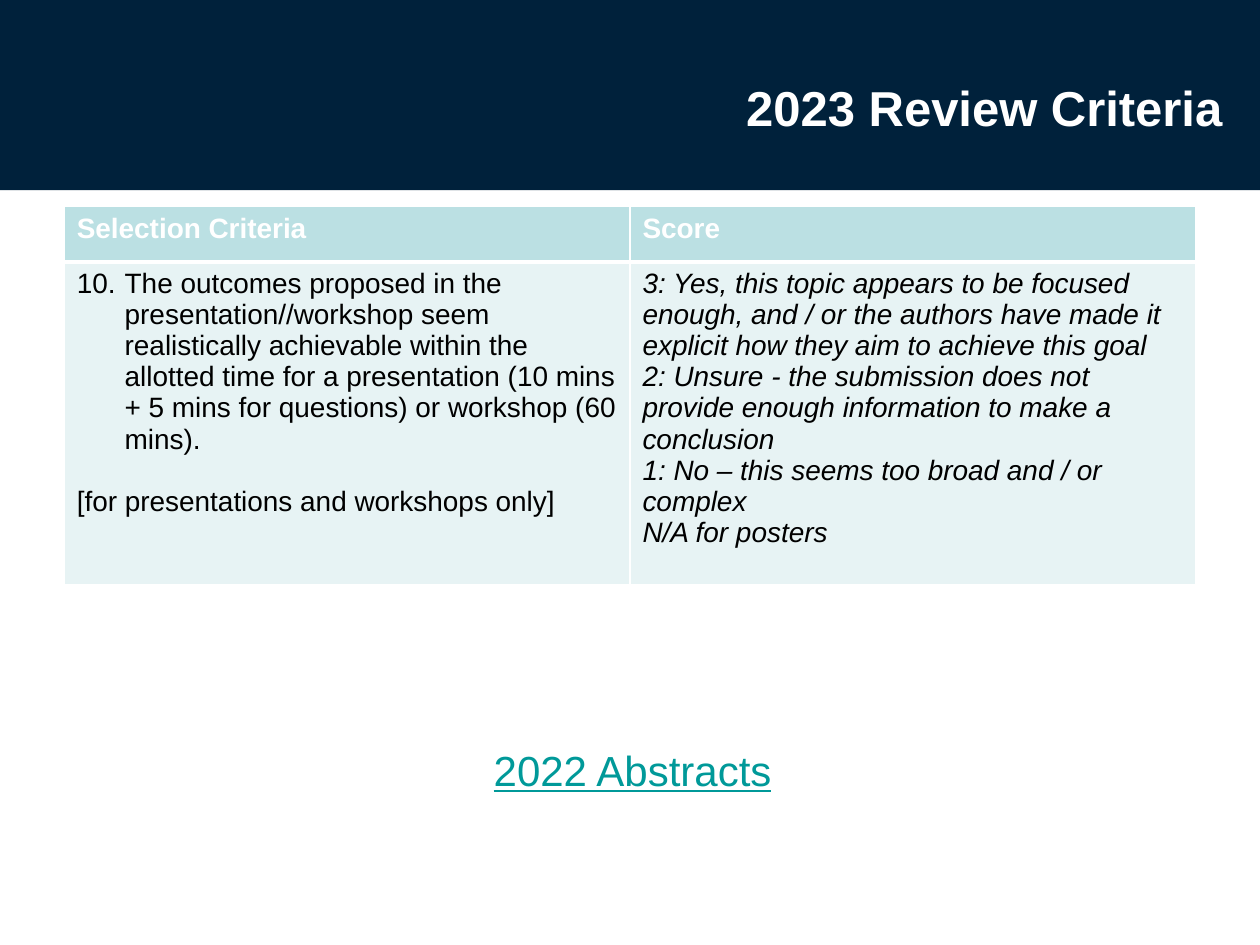
from lxml import etree
from pptx import Presentation
from pptx.dml.color import RGBColor
from pptx.enum import shapes, text
from pptx.oxml import ns
from pptx.util import Inches, Pt

NAVY = RGBColor(0x00, 0x21, 0x3B)
WHITE = RGBColor(0xFF, 0xFF, 0xFF)
BLACK = RGBColor(0x00, 0x00, 0x00)
AQUA = RGBColor(0xBB, 0xE0, 0xE3)
PALE = RGBColor(0xE7, 0xF3, 0xF4)
TEAL = RGBColor(0x00, 0x99, 0x99)

OUTCOME = (
    "The outcomes proposed in the presentation//workshop seem realistically "
    "achievable within the allotted time for a presentation (10 mins + 5 mins "
    "for questions) or workshop (60 mins)."
)
SCOPE = "[for presentations and workshops only]"
SCORES = [
    "3: Yes, this topic appears to be focused enough, and / or the authors "
    "have made it explicit how they aim to achieve this goal",
    "2: Unsure - the submission does not provide enough information to make a conclusion",
    "1: No – this seems too broad and / or complex",
    "N/A for posters",
]


def write(frame, lines, size=16, color=BLACK, bold=False, italic=False,
          underline=False, align=text.PP_ALIGN.LEFT, gap=0):
    for index, line in enumerate(lines):
        para = frame.paragraphs[0] if index == 0 else frame.add_paragraph()
        para.alignment = align
        if index and gap:
            para.space_before = Pt(gap)
        span = para.add_run()
        span.text = line
        font = span.font
        font.name, font.size = "Arial", Pt(size)
        font.bold, font.italic, font.underline = bold, italic, underline
        font.color.rgb = color


def number(para, start, indent):
    properties = para._p.get_or_add_pPr()
    properties.set("marL", str(indent))
    properties.set("indent", str(-indent))
    etree.SubElement(properties, ns.qn("a:buFont"), typeface="+mj-lt")
    etree.SubElement(properties, ns.qn("a:buAutoNum"),
                     type="arabicPeriod", startAt=str(start))


def border(cell, **widths):
    properties = cell._tc.get_or_add_tcPr()
    for side in "LRTB":
        line = etree.SubElement(properties, ns.qn("a:ln" + side),
                                w=str(Pt(widths.get(side, 1))))
        fill = etree.SubElement(line, ns.qn("a:solidFill"))
        etree.SubElement(fill, ns.qn("a:srgbClr"), val=str(WHITE))


def add_band(page):
    band = page.shapes.add_shape(shapes.MSO_SHAPE.RECTANGLE, 0, 0, Inches(10), Inches(1.51))
    band.shadow.inherit = False
    band.fill.solid()
    band.fill.fore_color.rgb = NAVY
    band.line.fill.background()
    page.shapes._spTree.insert(2, band._element)


def add_title(page, title):
    box = page.shapes.title
    box.left, box.top, box.width, box.height = map(Inches, (1.3, 0.04, 8.5, 1.61))
    box.text_frame.vertical_anchor = text.MSO_ANCHOR.MIDDLE
    write(box.text_frame, [title], size=28, color=WHITE, bold=True,
          align=text.PP_ALIGN.RIGHT)


def add_criteria(page):
    table = page.shapes.add_table(2, 2, Inches(0.51), Inches(1.64),
                                  Inches(8.98), Inches(3)).table
    table.rows[0].height, table.rows[1].height = Inches(0.44), Inches(2.56)
    for column, heading in enumerate(["Selection Criteria", "Score"]):
        head, body = table.cell(0, column), table.cell(1, column)
        border(head, B=3)
        border(body, T=3)
        for cell, color in ((head, AQUA), (body, PALE)):
            cell.fill.solid()
            cell.fill.fore_color.rgb = color
        write(head.text_frame, [heading], color=WHITE, bold=True)
    criterion = table.cell(1, 0).text_frame
    write(criterion, [OUTCOME, SCOPE], gap=18)
    number(criterion.paragraphs[0], 10, Inches(0.38))
    write(table.cell(1, 1).text_frame, SCORES, italic=True)


def add_label(page, label):
    box = page.shapes.add_textbox(Inches(3.82), Inches(5.86), Inches(3.23), Inches(0.5))
    box.text_frame.word_wrap = True
    write(box.text_frame, [label], size=24, color=TEAL, underline=True)


def main():
    deck = Presentation()
    deck.slide_width, deck.slide_height = Inches(10), Inches(7.5)
    page = deck.slides.add_slide(deck.slide_layouts[5])
    add_band(page)
    add_title(page, "2023 Review Criteria")
    add_criteria(page)
    add_label(page, "2022 Abstracts")
    deck.save("out.pptx")


if __name__ == "__main__":
    main()
